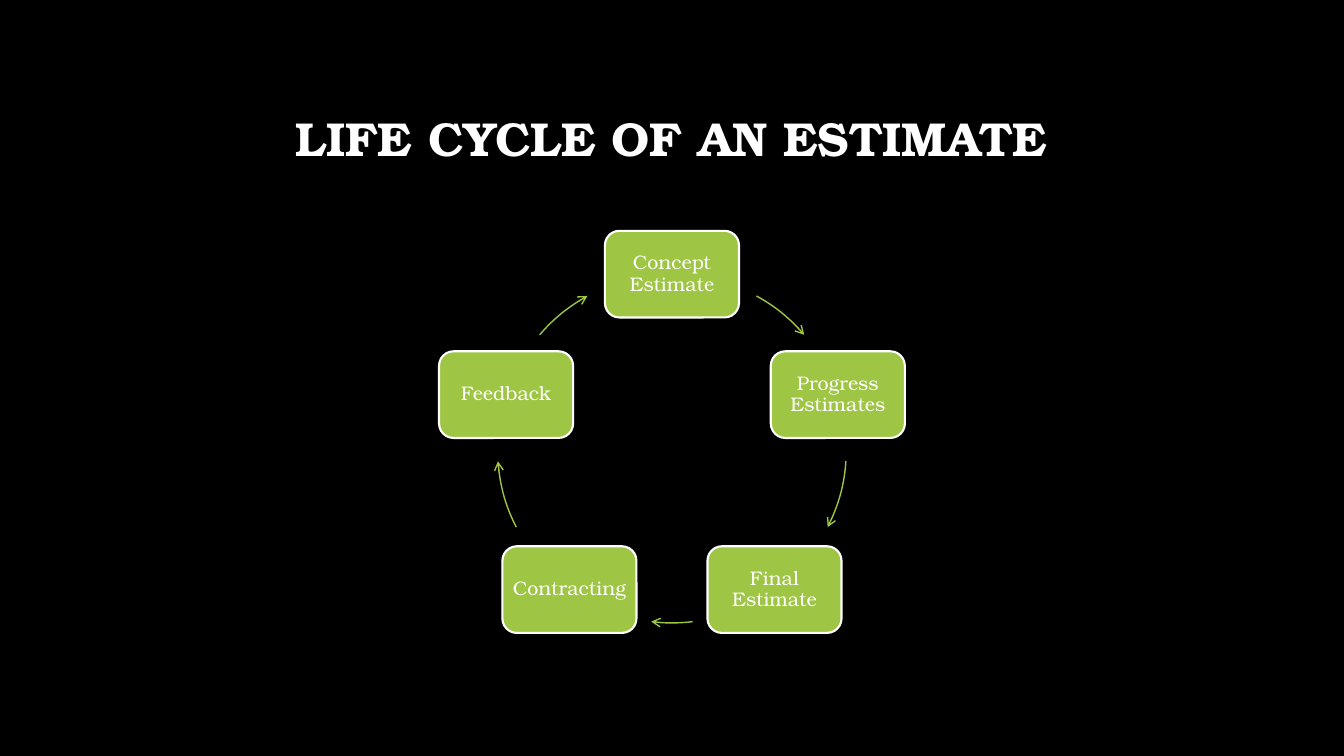
import math

import pptx
import pptx.dml.color
import pptx.enum.shapes
import pptx.enum.text
import pptx.oxml
import pptx.oxml.ns
import pptx.util

Inches = pptx.util.Inches
Shapes = pptx.enum.shapes.MSO_SHAPE

TITLE = "LIFE CYCLE OF AN ESTIMATE"
# Each stage with the arrow leaving it: start and end in degrees clockwise from the top
STAGES = [
    ("Concept Estimate", 29, 49.3),
    ("Progress Estimates", 94.2, 116.8),
    ("Final Estimate", 173.2, 186.8),
    ("Contracting", 243.2, 265.8),
    ("Feedback", 310.7, 331),
]
BLACK, WHITE, GREEN = "000000", "FFFFFF", "9EC544"
FONT = "TeX Gyre Bonum"
SLIDE_WIDTH, SLIDE_HEIGHT = 13.33, 7.5
TITLE_BOX = (1, 0.67, 11.32, 1.45)
CENTER_X, CENTER_Y, RADIUS = SLIDE_WIDTH / 2, 4.45, 1.73
BOX_WIDTH, BOX_HEIGHT = 1.33, 0.86
TEXT_FRAME = {
    "word_wrap": True,
    "vertical_anchor": pptx.enum.text.MSO_ANCHOR.MIDDLE,
}
BOX_MARGINS = {
    "margin_left": Inches(0.05),
    "margin_right": Inches(0.05),
    "margin_top": Inches(0.06),
    "margin_bottom": Inches(0.06),
}
PARAGRAPH = {"alignment": pptx.enum.text.PP_ALIGN.CENTER, "line_spacing": 0.9}


def apply(target, values):
    for name, value in values.items():
        setattr(target, name, value)


def paint(color_format, color):
    color_format.rgb = pptx.dml.color.RGBColor.from_string(color)


def write(shape, text, size, bold=False):
    frame = shape.text_frame
    frame.text = text
    apply(frame, TEXT_FRAME)
    paragraph = frame.paragraphs[0]
    apply(paragraph, PARAGRAPH)
    font = paragraph.runs[0].font
    apply(font, {"name": FONT, "size": pptx.util.Pt(size), "bold": bold})
    paint(font.color, WHITE)


def add_centered(slide, kind, x, y, width, height, line_color, line_width):
    """Add an outlined preset shape around the point x, y."""
    box = (x - width / 2, y - height / 2, width, height)
    shape = slide.shapes.add_shape(kind, *map(Inches, box))
    shape.shadow.inherit = False
    paint(shape.line.color, line_color)
    shape.line.width = pptx.util.Pt(line_width)
    return shape


def add_stage(slide, text, angle):
    x = CENTER_X + RADIUS * math.sin(math.radians(angle))
    y = CENTER_Y - RADIUS * math.cos(math.radians(angle))
    box = add_centered(slide, Shapes.ROUNDED_RECTANGLE, x, y,
                       BOX_WIDTH, BOX_HEIGHT, WHITE, 1.5)
    box.fill.solid()
    paint(box.fill.fore_color, GREEN)
    write(box, text, 14)
    apply(box.text_frame, BOX_MARGINS)


def add_arrow(slide, start, end):
    arc = add_centered(slide, Shapes.ARC, CENTER_X, CENTER_Y,
                       2 * RADIUS, 2 * RADIUS, GREEN, 1)
    arc.fill.background()
    for index, angle in enumerate((start, end)):
        # Arc angles run from three o'clock; one degree is 0.6 adjustment units
        arc.adjustments[index] = (angle - 90) % 360 * 0.6
    line = arc.line._get_or_add_ln()
    tail = pptx.oxml.parse_xml(
        f'<a:tailEnd {pptx.oxml.ns.nsdecls("a")} type="arrow"/>')
    line.append(tail)


def main():
    presentation = pptx.Presentation()
    presentation.slide_width = Inches(SLIDE_WIDTH)
    presentation.slide_height = Inches(SLIDE_HEIGHT)
    slide = presentation.slides.add_slide(presentation.slide_layouts[5])
    slide.background.fill.solid()
    paint(slide.background.fill.fore_color, BLACK)

    title = slide.shapes.title
    apply(title, dict(zip(("left", "top", "width", "height"), map(Inches, TITLE_BOX))))
    write(title, TITLE, 34, bold=True)

    for index, (text, start, end) in enumerate(STAGES):
        add_stage(slide, text, index * 360 / len(STAGES))
        add_arrow(slide, start, end)
    presentation.save("out.pptx")


if __name__ == "__main__":
    main()
